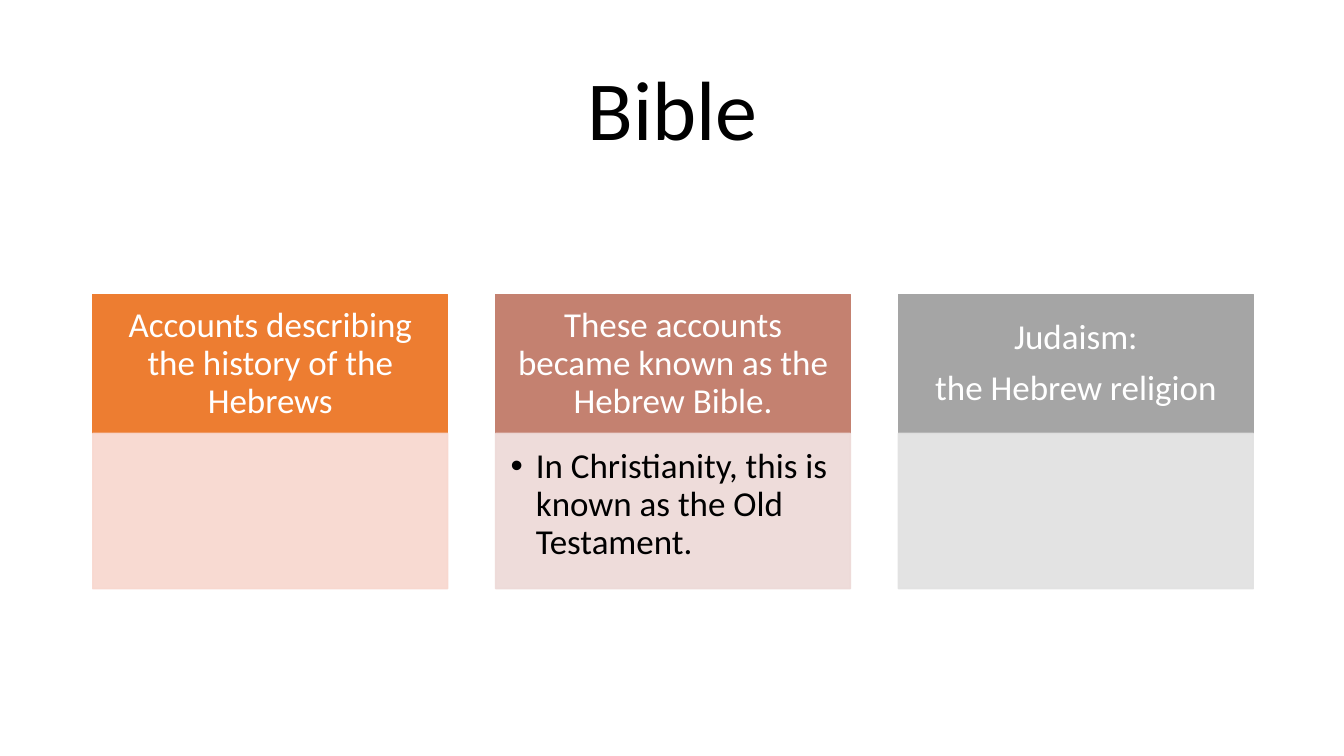
from lxml import etree
from pptx import Presentation
from pptx import util as u
from pptx.dml.color import RGBColor
from pptx.enum import shapes, text
from pptx.oxml.ns import qn

# Content: heading paragraphs, bullets, heading colour, body colour
TITLE = "Bible"
COLUMNS = [
    (["Accounts describing the history of the Hebrews"], [], "ED7D31", "F8D7CE"),
    (["These accounts became known as the Hebrew Bible."],
     ["In Christianity, this is known as the Old Testament."], "C48170", "EDD9D7"),
    (["Judaism:", "the Hebrew religion"], [], "A5A5A5", "E1E1E1"),
]

# Layout in inches
LEFT, TOP, WIDTH, PITCH = 0.92, 2.92, 3.52, 3.995
HEAD_H, BODY_H = 1.38, 1.54
MARGINS = ("margin_left", "margin_top", "margin_right", "margin_bottom")
HEAD = dict(insets=(0.19, 0.11, 0.19, 0.11), anchor=text.MSO_ANCHOR.MIDDLE,
            align=text.PP_ALIGN.CENTER, after=9.5, color="FFFFFF")
BODY = dict(insets=(0.15, 0.15, 0.19, 0.22), anchor=text.MSO_ANCHOR.TOP,
            align=text.PP_ALIGN.LEFT, after=4, color="000000")


def rgb(value):
    return RGBColor.from_string(value)


def write(p, words, size, color, align, after=0):
    for name, value in dict(alignment=align, line_spacing=0.9,
                            space_before=u.Pt(0), space_after=u.Pt(after)).items():
        setattr(p, name, value)
    r = p.add_run()
    r.text = words
    for name, value in dict(name="Calibri", size=u.Pt(size)).items():
        setattr(r.font, name, value)
    r.font.color.rgb = rgb(color)


def add_bullet(p):
    pPr = p._p.get_or_add_pPr()
    pPr.set("marL", str(u.Inches(0.25)))
    pPr.set("indent", str(u.Inches(-0.25)))
    etree.SubElement(pPr, qn("a:buFont")).set("typeface", "Arial")
    etree.SubElement(pPr, qn("a:buChar")).set("char", "•")


def add_box(s, x, y, h, color, lines, style, opacity=100, bullets=False):
    sp = s.shapes.add_shape(shapes.MSO_SHAPE.RECTANGLE,
                            *(u.Inches(v) for v in (x, y, WIDTH, h)))
    sp.shadow.inherit = False
    sp.fill.solid()
    sp.line.fill.solid()
    sp.line.width = u.Pt(1)
    for target in (sp.fill.fore_color, sp.line.color):
        target.rgb = rgb(color)
    if opacity < 100:
        for node in sp._element.spPr.iter(qn("a:srgbClr")):
            etree.SubElement(node, qn("a:alpha")).set("val", str(opacity * 1000))
    tf = sp.text_frame
    tf.word_wrap = True
    tf.vertical_anchor = style["anchor"]
    for name, inset in zip(MARGINS, style["insets"]):
        setattr(tf, name, u.Inches(inset))
    for i, line in enumerate(lines):
        p = tf.add_paragraph() if i else tf.paragraphs[0]
        write(p, line, 25, style["color"], style["align"], style["after"])
        if bullets:
            add_bullet(p)


def main():
    prs = Presentation()
    prs.slide_width, prs.slide_height = u.Inches(13.33), u.Inches(7.5)
    s = prs.slides.add_slide(prs.slide_layouts[5])

    # Title
    title = s.shapes.title
    for name, value in dict(left=0.92, top=0.4, width=11.5, height=1.45).items():
        setattr(title, name, u.Inches(value))
    title.text_frame.vertical_anchor = text.MSO_ANCHOR.MIDDLE
    write(title.text_frame.paragraphs[0], TITLE, 60, "000000", text.PP_ALIGN.CENTER)

    # Three columns, each a heading over a pale body
    for i, (heading, points, dark, pale) in enumerate(COLUMNS):
        x = LEFT + i * PITCH
        add_box(s, x, TOP, HEAD_H, dark, heading, HEAD)
        add_box(s, x, TOP + HEAD_H, BODY_H, pale, points, BODY, opacity=90, bullets=True)

    prs.save("out.pptx")


if __name__ == "__main__":
    main()
